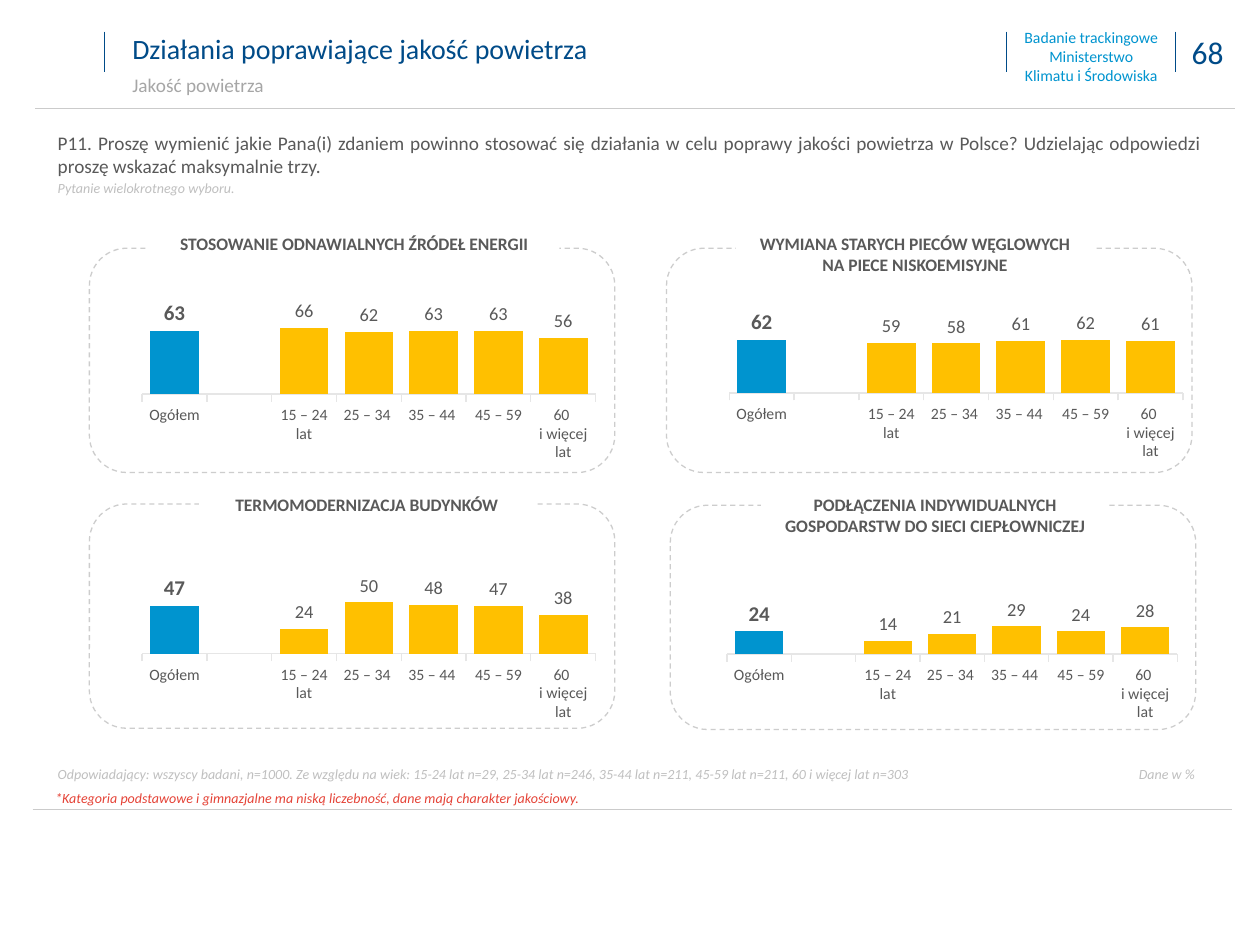
from dataclasses import dataclass

import lxml.etree
import pptx
import pptx.chart.data
import pptx.dml.color
import pptx.enum.chart
import pptx.enum.dml
import pptx.enum.shapes
import pptx.enum.text
import pptx.oxml.ns
import pptx.util

Inches, Pt = pptx.util.Inches, pptx.util.Pt
ALIGN = pptx.enum.text.PP_ALIGN
SHAPE = pptx.enum.shapes.MSO_SHAPE
qn = pptx.oxml.ns.qn
Box = tuple[float, float, float, float]


@dataclass(frozen=True)
class Theme:
    font: str = "Calibri"
    navy: str = "004B88"
    blue: str = "0094CF"
    yellow: str = "FFC000"
    red: str = "E54337"
    ink: str = "595959"
    subtitle: str = "A6A6A6"
    note: str = "BFBFBF"
    rule: str = "CBCBCB"
    frame: str = "CDCDCD"
    axis: str = "E6E6E6"
    white: str = "FFFFFF"
    number_size: float = 18
    title_size: float = 16
    total_size: float = 12
    body_size: float = 11
    value_size: float = 10.5
    heading_size: float = 10
    label_size: float = 9
    note_size: float = 8


@dataclass(frozen=True)
class Style:
    size: float
    color: str
    bold: bool = False
    italic: bool = False


@dataclass(frozen=True)
class Panel:
    heading: str
    values: tuple[int | None, ...]
    axis_max: int
    chart: Box
    plot: Box  # fractions of the chart area
    frame: Box
    heading_box: Box


THEME = Theme()
NOTE = Style(THEME.note_size, THEME.note, italic=True)
AGES = ("Ogółem", "", "15 – 24 lat", "25 – 34 ", "35 – 44 ", "45 – 59", "60 \ni więcej lat")
PANELS = (
    Panel("STOSOWANIE ODNAWIALNYCH ŹRÓDEŁ ENERGII", (63, None, 66, 62, 63, 63, 56), 70,
          (0.93, 2.11, 3.81, 2.05), (0.052, 0.225, 0.945, 0.272),
          (0.71, 1.97, 4.17, 1.78), (1.18, 1.8, 3.26, 0.27)),
    Panel("WYMIANA STARYCH PIECÓW WĘGLOWYCH NA PIECE NISKOEMISYJNE",
          (62, None, 59, 58, 61, 62, 61), 70,
          (5.59, 2.1, 3.81, 2.05), (0.052, 0.266, 0.945, 0.231),
          (5.29, 1.97, 4.17, 1.78), (5.84, 1.8, 2.84, 0.44)),
    Panel("TERMOMODERNIZACJA BUDYNKÓW", (47, None, 24, 50, 48, 47, 38), 60,
          (0.93, 4.17, 3.81, 2.05), (0.052, 0.259, 0.945, 0.238),
          (0.71, 4, 4.17, 1.78), (1.58, 3.87, 2.66, 0.27)),
    Panel("PODŁĄCZENIA INDYWIDUALNYCH GOSPODARSTW DO SIECI CIEPŁOWNICZEJ",
          (24, None, 14, 21, 29, 24, 28), 35,
          (5.58, 4.31, 3.81, 2.05), (0.05, 0.301, 0.938, 0.129),
          (5.32, 4.01, 4.17, 1.78), (6.04, 3.87, 2.76, 0.44)),
)


def rgb(color: str) -> pptx.dml.color.RGBColor:
    return pptx.dml.color.RGBColor.from_string(color)


def inches(box: Box) -> list[int]:
    return [Inches(length) for length in box]


def style_font(font, style: Style) -> None:
    font.name = THEME.font
    font.size = Pt(style.size)
    font.bold = style.bold
    font.italic = style.italic
    font.color.rgb = rgb(style.color)


def write(frame, text: str, styles: list[Style], align=ALIGN.LEFT) -> None:
    """Fill a text frame; the last style serves all remaining paragraphs."""
    frame.word_wrap = True
    frame.text = text
    for index, paragraph in enumerate(frame.paragraphs):
        style = styles[min(index, len(styles) - 1)]
        paragraph.alignment = align
        for run in paragraph.runs:
            style_font(run.font, style)


def add_text(slide, box: Box, text: str, *styles: Style, align=ALIGN.LEFT, inset: float = 0.1):
    frame = slide.shapes.add_textbox(*inches(box)).text_frame
    frame.margin_left = Inches(inset)
    write(frame, text, styles, align)
    return frame


def add_rule(slide, start: tuple[float, float], end: tuple[float, float], color: str) -> None:
    rule = slide.shapes.add_connector(
        pptx.enum.shapes.MSO_CONNECTOR.STRAIGHT, *inches(start + end))
    rule.line.color.rgb = rgb(color)
    rule.line.width = Pt(0.25)
    lxml.etree.SubElement(rule.element.spPr, qn("a:effectLst"))


def place_plot(chart, plot: Box) -> None:
    """Fix the inner plot area at the given fractions of the chart."""
    area = chart.element.find(".//" + qn("c:plotArea"))
    for old in area.findall(qn("c:layout")):
        area.remove(old)
    layout = lxml.etree.Element(qn("c:layout"))
    manual = lxml.etree.SubElement(layout, qn("c:manualLayout"))
    settings = [("layoutTarget", "inner"), ("xMode", "edge"), ("yMode", "edge")]
    settings += zip("xywh", map(str, plot))
    for tag, value in settings:
        lxml.etree.SubElement(manual, qn("c:" + tag)).set("val", value)
    area.insert(0, layout)


def add_age_chart(slide, panel: Panel) -> None:
    data = pptx.chart.data.CategoryChartData(number_format="#,##0")
    data.categories = AGES
    data.add_series("Series 1", panel.values)
    chart = slide.shapes.add_chart(
        pptx.enum.chart.XL_CHART_TYPE.COLUMN_CLUSTERED, *inches(panel.chart), data).chart
    chart.has_legend = chart.has_title = False
    style_font(chart.font, Style(THEME.heading_size, THEME.ink))
    place_plot(chart, panel.plot)

    scale = chart.value_axis
    scale.visible = scale.has_major_gridlines = False
    scale.minimum_scale, scale.maximum_scale = 0, panel.axis_max
    ages = chart.category_axis
    ages.major_tick_mark = pptx.enum.chart.XL_TICK_MARK.OUTSIDE
    ages.format.line.color.rgb = rgb(THEME.axis)
    ages.format.line.width = Pt(0.75)
    style_font(ages.tick_labels.font, Style(THEME.label_size, THEME.ink))

    columns = chart.plots[0]
    columns.vary_by_categories = False
    columns.gap_width, columns.overlap = 33, -10
    series = columns.series[0]
    series.format.fill.solid()
    series.format.fill.fore_color.rgb = rgb(THEME.blue)
    for index in range(2, len(AGES)):
        fill = series.points[index].format.fill
        fill.solid()
        fill.fore_color.rgb = rgb(THEME.yellow)

    outside = pptx.enum.chart.XL_LABEL_POSITION.OUTSIDE_END
    labels = series.data_labels
    labels.show_value = True
    labels.number_format, labels.number_format_is_linked = "#,##0", False
    labels.position = outside
    style_font(labels.font, Style(THEME.value_size, THEME.ink))
    total = series.points[0].data_label
    style_font(total.font, Style(THEME.total_size, THEME.ink, bold=True))
    total.position = outside


def add_frame(slide, panel: Panel) -> None:
    frame = slide.shapes.add_shape(SHAPE.ROUNDED_RECTANGLE, *inches(panel.frame))
    frame.shadow.inherit = False
    frame.fill.background()
    frame.line.color.rgb = rgb(THEME.frame)
    frame.line.width = Pt(0.75)
    frame.line.dash_style = pptx.enum.dml.MSO_LINE.DASH


def add_heading(slide, panel: Panel) -> None:
    heading = slide.shapes.add_shape(SHAPE.RECTANGLE, *inches(panel.heading_box))
    heading.shadow.inherit = False
    heading.fill.solid()
    heading.fill.fore_color.rgb = rgb(THEME.white)
    heading.line.fill.background()
    write(heading.text_frame, panel.heading,
          [Style(THEME.heading_size, THEME.ink, bold=True)], ALIGN.CENTER)


def main() -> None:
    deck = pptx.Presentation()
    deck.slide_width, deck.slide_height = Inches(10), Inches(7.5)
    slide = deck.slides.add_slide(deck.slide_layouts[6])

    for x in (0.83, 7.99, 9.33):
        add_rule(slide, (x, 0.25), (x, 0.57), THEME.navy)
    for x, y in ((0.28, 0.86), (0.26, 6.42)):
        add_rule(slide, (x, y), (x + 9.52, y), THEME.rule)
    add_text(slide, (9.25, 0.21, 0.67, 0.4), "68",
             Style(THEME.number_size, THEME.navy), align=ALIGN.CENTER)
    add_text(slide, (7.94, 0.17, 1.44, 0.56),
             "Badanie trackingowe\nMinisterstwo\nKlimatu i Środowiska",
             Style(THEME.label_size, THEME.blue), align=ALIGN.CENTER)
    add_text(slide, (0.83, 0.2, 7.17, 0.41), "Działania poprawiające jakość powietrza",
             Style(THEME.title_size, THEME.navy), inset=0.22)
    add_text(slide, (0.83, 0.53, 7.15, 0.24), "Jakość powietrza",
             Style(THEME.body_size, THEME.subtitle), inset=0.22)
    question = add_text(
        slide, (0.36, 0.99, 9.28, 1.18),
        "P11. Proszę wymienić jakie Pana(i) zdaniem powinno stosować się działania w celu "
        "poprawy jakości powietrza w Polsce? Udzielając odpowiedzi proszę wskazać "
        "maksymalnie trzy.\nPytanie wielokrotnego wyboru.",
        Style(THEME.body_size, THEME.ink), NOTE, align=ALIGN.JUSTIFY)
    question.paragraphs[1].space_before = Pt(1.6)

    for draw in (add_age_chart, add_frame, add_heading):
        for panel in PANELS:
            draw(slide, panel)

    add_text(slide, (0.36, 6.03, 8.5, 0.24),
             "Odpowiadający: wszyscy badani, n=1000. Ze względu na wiek: 15-24 lat n=29, "
             "25-34 lat n=246, 35-44 lat n=211, 45-59 lat n=211, 60 i więcej lat n=303", NOTE)
    add_text(slide, (8.94, 6.03, 0.7, 0.24), "Dane w %", NOTE)
    add_text(slide, (0.34, 6.22, 5.89, 0.24),
             "*Kategoria podstawowe i gimnazjalne ma niską liczebność, "
             "dane mają charakter jakościowy.",
             Style(THEME.note_size, THEME.red, italic=True), align=ALIGN.JUSTIFY)
    deck.save("out.pptx")


if __name__ == "__main__":
    main()
